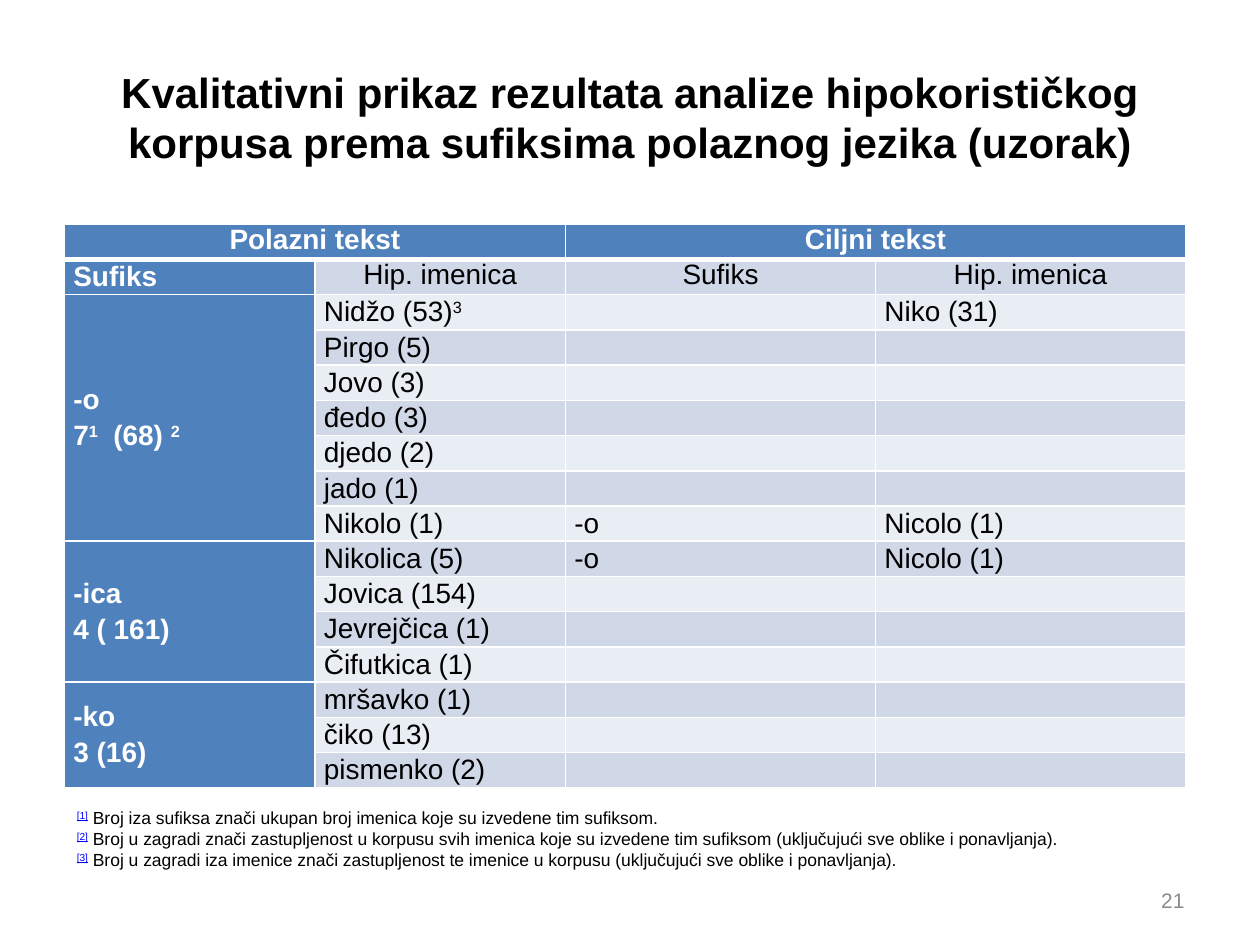
from dataclasses import dataclass

from lxml.etree import SubElement
from pptx import Presentation
from pptx.dml.color import RGBColor
from pptx.enum.text import MSO_ANCHOR, PP_ALIGN
from pptx.oxml.ns import qn
from pptx.slide import Slide
from pptx.table import Table, _Cell
from pptx.text.text import TextFrame, _Paragraph
from pptx.util import Cm, Pt

BLACK = RGBColor(0x00, 0x00, 0x00)
WHITE = RGBColor(0xFF, 0xFF, 0xFF)
GRAY = RGBColor(0x8C, 0x8C, 0x8C)
LINK_BLUE = RGBColor(0x00, 0x00, 0xFF)
HEADER_BLUE = RGBColor(0x4F, 0x81, 0xBD)
BAND_DARK = RGBColor(0xD0, 0xD8, 0xE8)
BAND_LIGHT = RGBColor(0xE9, 0xED, 0xF4)

FONT = "Arial"
TABLE_SIZE = 16
COLUMN_WIDTHS = (5.05, 5.05, 6.25, 6.25)
ROW_HEIGHT = 0.71


@dataclass(frozen=True)
class Style:
    size: float
    color: RGBColor = BLACK
    bold: bool = False
    underline: bool = False


@dataclass(frozen=True)
class Piece:
    text: str
    raised: bool = False


@dataclass(frozen=True)
class Noun:
    """A source noun with its target suffix and target noun."""
    source: tuple[Piece, ...]
    target_suffix: str = ""
    target: str = ""


@dataclass(frozen=True)
class SuffixGroup:
    suffix: str
    counts: tuple[Piece, ...]
    nouns: tuple[Noun, ...]


def plain(text: str) -> tuple[Piece, ...]:
    return (Piece(text),) if text else ()


def noun(source: str, target_suffix: str = "", target: str = "") -> Noun:
    return Noun(plain(source), target_suffix, target)


GROUPS = (
    SuffixGroup(
        "-o",
        (Piece("7"), Piece("1", True), Piece("  (68) "), Piece("2", True)),
        (
            Noun((Piece("Nidžo (53)"), Piece("3", True)), target="Niko (31)"),
            noun("Pirgo (5)"),
            noun("Jovo (3)"),
            noun("đedo (3)"),
            noun("djedo (2)"),
            noun("jado (1)"),
            noun("Nikolo (1)", "-o", "Nicolo (1)"),
        ),
    ),
    SuffixGroup(
        "-ica",
        plain("4 ( 161)"),
        (
            noun("Nikolica (5)", "-o", "Nicolo (1)"),
            noun("Jovica (154)"),
            noun("Jevrejčica (1)"),
            noun("Čifutkica (1)"),
        ),
    ),
    SuffixGroup(
        "-ko",
        plain("3 (16)"),
        (noun("mršavko (1)"), noun("čiko (13)"), noun("pismenko (2)")),
    ),
)
FOOTNOTES = (
    "Broj iza sufiksa znači ukupan broj imenica koje su izvedene tim sufiksom.",
    "Broj u zagradi znači zastupljenost u korpusu svih imenica koje su izvedene "
    "tim sufiksom (uključujući sve oblike i ponavljanja).",
    "Broj u zagradi iza imenice znači zastupljenost te imenice u korpusu "
    "(uključujući sve oblike i ponavljanja).",
)

BODY = Style(TABLE_SIZE)
HEADING = Style(TABLE_SIZE, WHITE, bold=True)


def add_piece(paragraph: _Paragraph, piece: Piece, style: Style) -> None:
    run = paragraph.add_run()
    run.text = piece.text
    font = run.font
    font.name, font.size = FONT, Pt(style.size)
    font.bold, font.underline = style.bold, style.underline
    font.color.rgb = style.color
    if piece.raised:
        run._r.get_or_add_rPr().set("baseline", "30000")


def next_paragraph(frame: TextFrame, index: int) -> _Paragraph:
    return frame.add_paragraph() if index else frame.paragraphs[0]


def add_text_box(slide: Slide, left: float, top: float, width: float, height: float) -> TextFrame:
    frame = slide.shapes.add_textbox(Cm(left), Cm(top), Cm(width), Cm(height)).text_frame
    frame.word_wrap = True
    frame.vertical_anchor = MSO_ANCHOR.MIDDLE
    return frame


def add_label(frame: TextFrame, text: str, style: Style, alignment: PP_ALIGN) -> None:
    paragraph = frame.paragraphs[0]
    paragraph.alignment = alignment
    add_piece(paragraph, Piece(text), style)


def set_borders(cell: _Cell, row: int) -> None:
    """White grid, thicker under the first row."""
    properties = cell._tc.get_or_add_tcPr()
    for side in ("lnL", "lnR", "lnT", "lnB"):
        thick = (row, side) in ((0, "lnB"), (1, "lnT"))
        line = SubElement(properties, qn(f"a:{side}"), w=str(Pt(3 if thick else 1)))
        fill = SubElement(line, qn("a:solidFill"))
        SubElement(fill, qn("a:srgbClr"), val=str(WHITE))


def format_cell(cell: _Cell, row: int, color: RGBColor) -> None:
    set_borders(cell, row)
    cell.fill.solid()
    cell.fill.fore_color.rgb = color
    cell.margin_left = cell.margin_right = Cm(0.18)
    cell.margin_top = cell.margin_bottom = 0
    cell.vertical_anchor = MSO_ANCHOR.MIDDLE
    # An empty cell must not push its row taller than the text size.
    paragraph = cell.text_frame.paragraphs[0]
    SubElement(paragraph._p, qn("a:endParaRPr"), sz=str(TABLE_SIZE * 100))


def write_cell(cell: _Cell, lines: tuple[tuple[Piece, ...], ...], style: Style = BODY,
               centered: bool = False) -> None:
    if centered:
        cell.vertical_anchor = MSO_ANCHOR.TOP
    for index, pieces in enumerate(lines):
        paragraph = next_paragraph(cell.text_frame, index)
        paragraph.alignment = PP_ALIGN.CENTER if centered else PP_ALIGN.LEFT
        paragraph.space_after = Pt(3)
        for piece in pieces:
            add_piece(paragraph, piece, style)


def fill_table(table: Table) -> None:
    for column, width in zip(table.columns, COLUMN_WIDTHS):
        column.width = Cm(width)
    for row_index, row in enumerate(table.rows):
        row.height = Cm(ROW_HEIGHT)
        band = BAND_DARK if row_index % 2 else BAND_LIGHT
        for column_index, cell in enumerate(row.cells):
            is_heading = row_index == 0 or column_index == 0
            format_cell(cell, row_index, HEADER_BLUE if is_heading else band)

    for column, text in ((0, "Polazni tekst"), (2, "Ciljni tekst")):
        table.cell(0, column).merge(table.cell(0, column + 1))
        write_cell(table.cell(0, column), (plain(text),), HEADING, centered=True)
    write_cell(table.cell(1, 0), (plain("Sufiks"),), HEADING)
    for column, text in enumerate(("Hip. imenica", "Sufiks", "Hip. imenica"), 1):
        write_cell(table.cell(1, column), (plain(text),), centered=True)

    row_index = 2
    for group in GROUPS:
        first = table.cell(row_index, 0)
        first.merge(table.cell(row_index + len(group.nouns) - 1, 0))
        write_cell(first, (plain(group.suffix), group.counts), HEADING)
        for entry in group.nouns:
            texts = (entry.source, plain(entry.target_suffix), plain(entry.target))
            for column, pieces in enumerate(texts, 1):
                if pieces:
                    write_cell(table.cell(row_index, column), (pieces,))
            row_index += 1


def main() -> None:
    presentation = Presentation()
    presentation.slide_width, presentation.slide_height = Cm(25.4), Cm(19.05)
    slide = presentation.slides.add_slide(presentation.slide_layouts[6])

    add_label(add_text_box(slide, 1.27, 0.76, 22.86, 3.18),
              "Kvalitativni prikaz rezultata analize hipokorističkog korpusa "
              "prema sufiksima polaznog jezika (uzorak)",
              Style(24, bold=True), PP_ALIGN.CENTER)

    notes = add_text_box(slide, 1.3, 16.13, 21.59, 1.55)
    for index, text in enumerate(FOOTNOTES):
        paragraph = next_paragraph(notes, index)
        paragraph.alignment = PP_ALIGN.JUSTIFY
        add_piece(paragraph, Piece(f"[{index + 1}]", True), Style(10, LINK_BLUE, underline=True))
        add_piece(paragraph, Piece(f" {text}"), Style(10))

    row_count = 2 + sum(len(group.nouns) for group in GROUPS)
    fill_table(slide.shapes.add_table(
        row_count, len(COLUMN_WIDTHS), Cm(1.3), Cm(4.52),
        Cm(sum(COLUMN_WIDTHS)), Cm(row_count * ROW_HEIGHT)).table)

    add_label(add_text_box(slide, 18.2, 17.65, 5.93, 1.01), "21", Style(12, GRAY), PP_ALIGN.RIGHT)
    presentation.save("out.pptx")


if __name__ == "__main__":
    main()
